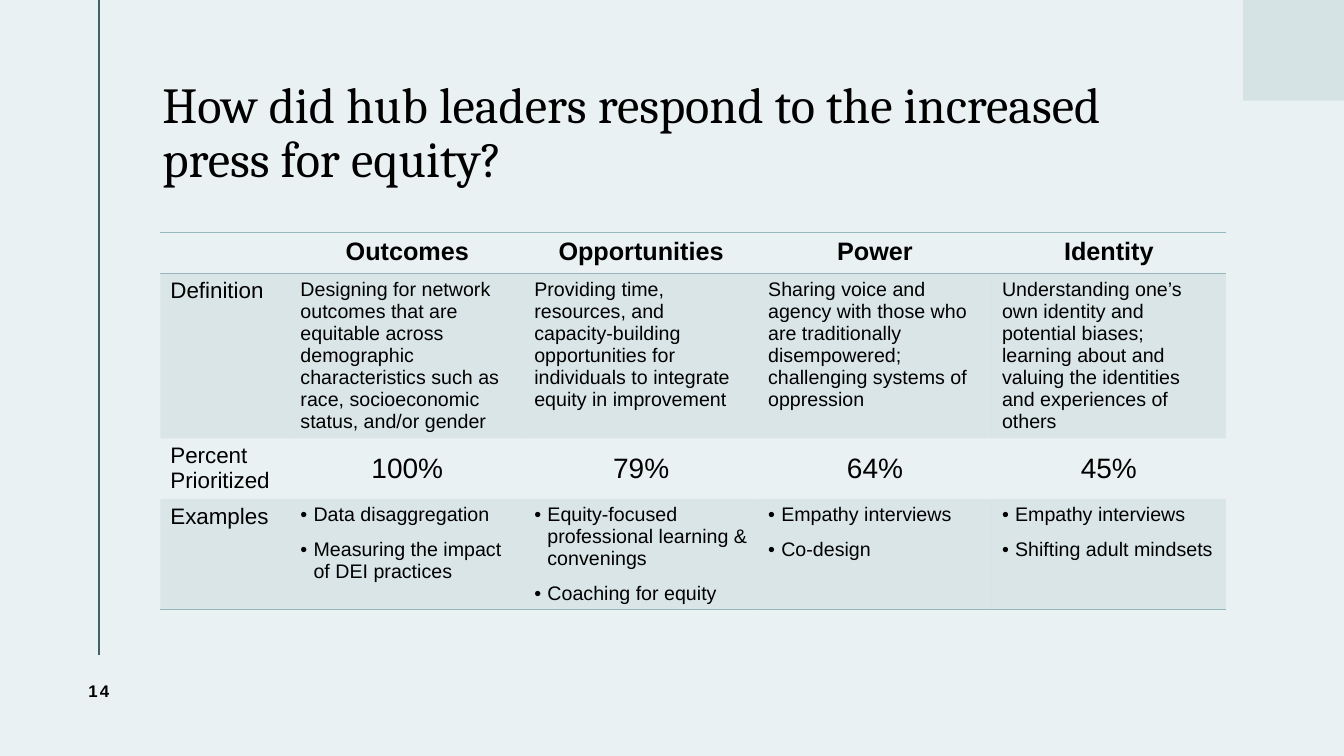
from lxml.etree import SubElement
from pptx import Presentation
from pptx.dml.color import RGBColor
from pptx.enum.shapes import MSO_CONNECTOR, MSO_SHAPE
from pptx.enum.text import MSO_ANCHOR, MSO_AUTO_SIZE, PP_ALIGN
from pptx.oxml.ns import qn
from pptx.util import Emu, Inches, Pt

WIDTH, HEIGHT = Inches(13.33), Inches(7.5)
BACKGROUND = RGBColor(0xEA, 0xF1, 0xF2)
RULE = RGBColor(0x40, 0x63, 0x6A)
CORNER = RGBColor(0xD5, 0xE3, 0xE5)
ACCENT = RGBColor(0x95, 0xB8, 0xBF)
BLACK = RGBColor(0, 0, 0)
NO_GRID_STYLE = "{2D5ABB26-0587-4C30-8999-92F81FD0307C}"

COLUMN_SHARES = [9.68] + [17.4] * 4
ROW_SHARES = [5.4, 21.8, 8, 14.67]
LABELS = ["", "Definition", "Percent\u0020Prioritized".replace("\u0020", " "), "Examples"]
LABELS = ["", "Definition", "Percent Prioritized", "Examples"]
HEADINGS = ["Outcomes", "Opportunities", "Power", "Identity"]
DEFINITIONS = [
    "Designing for network outcomes that are equitable across demographic "
    "characteristics such as race, socioeconomic status, and/or gender",
    "Providing time, resources, and capacity-building opportunities for "
    "individuals to integrate equity in improvement",
    "Sharing voice and agency with those who are traditionally disempowered; "
    "challenging systems of oppression",
    "Understanding one’s own identity and potential biases; learning about and "
    "valuing the identities and experiences of others",
]
PERCENTS = ["100%", "79%", "64%", "45%"]
EXAMPLES = [
    "Data disaggregation\nMeasuring the impact of DEI practices",
    "Equity-focused professional learning & convenings\nCoaching for equity",
    "Empathy interviews\nCo-design",
    "Empathy interviews\nShifting adult mindsets",
]


def across(percent):
    return Emu(round(WIDTH * percent / 100))


def down(percent):
    return Emu(round(HEIGHT * percent / 100))


def box(left, top, width, height):
    """Turn percentages of the slide into a position and size."""
    return across(left), down(top), across(width), down(height)


def style_text(text_frame, size, font="Arial", bold=False, align=PP_ALIGN.LEFT):
    for paragraph in text_frame.paragraphs:
        paragraph.alignment = align
        for run in paragraph.runs:
            run.font.name = font
            run.font.size = Pt(size)
            run.font.bold = bold
            run.font.color.rgb = BLACK


def add_decoration(slide):
    x = across(7.35)
    rule = slide.shapes.add_connector(MSO_CONNECTOR.STRAIGHT, x, 0, x, down(86.67))
    rule.line.color.rgb = RULE
    rule.line.width = Pt(1.5)
    SubElement(rule.element.spPr, qn("a:effectLst"))
    corner = slide.shapes.add_shape(MSO_SHAPE.RECTANGLE, *box(92.5, 0, 7.5, 13.33))
    corner.shadow.inherit = False
    corner.fill.solid()
    corner.fill.fore_color.rgb = CORNER
    corner.line.fill.background()


def set_title(slide, text):
    title = slide.shapes.title
    title.left, title.top, title.width, title.height = box(12.08, 7.33, 75.09, 20.8)
    frame = title.text_frame
    frame.text = text
    frame.word_wrap = True
    frame.auto_size = MSO_AUTO_SIZE.NONE
    frame.vertical_anchor = MSO_ANCHOR.MIDDLE
    frame.margin_left = 0
    frame.paragraphs[0].line_spacing = 0.9
    style_text(frame, 36, "Cambria")


def set_borders(cell, ruled_sides):
    """Rule the given sides (of L, R, T, B) and leave the others without a line."""
    properties = cell._tc.get_or_add_tcPr()
    for side in "LRTB":
        line = SubElement(properties, qn(f"a:ln{side}"), w=str(Pt(1)))
        if side in ruled_sides:
            fill = SubElement(line, qn("a:solidFill"))
            SubElement(fill, qn("a:srgbClr"), val=str(ACCENT))
        else:
            SubElement(line, qn("a:noFill"))


def shade(cell):
    cell.fill.solid()
    cell.fill.fore_color.rgb = ACCENT
    color = cell._tc.tcPr.find(f"{qn('a:solidFill')}/{qn('a:srgbClr')}")
    SubElement(color, qn("a:alpha"), val="20000")


def add_bullets(text_frame):
    indent = Inches(0.13)
    for index, paragraph in enumerate(text_frame.paragraphs):
        paragraph.space_before = Pt(9 if index else 0)
        properties = paragraph._p.get_or_add_pPr()
        properties.set("marL", str(indent))
        properties.set("indent", str(-indent))
        SubElement(properties, qn("a:buFont"), typeface="Arial")
        SubElement(properties, qn("a:buChar"), char="•")


def format_cell(cell, row, column):
    set_borders(cell, {0: "TB", 1: "T", 3: "B"}.get(row, ""))
    if row % 2:
        shade(cell)
    else:
        cell.fill.background()
    frame = cell.text_frame
    if row == 0:
        style_text(frame, 18, bold=True, align=PP_ALIGN.CENTER)
    elif column == 0:
        style_text(frame, 16)
    elif row == 2:
        cell.vertical_anchor = MSO_ANCHOR.MIDDLE
        style_text(frame, 20, align=PP_ALIGN.CENTER)
    else:
        style_text(frame, 14)
        if row == 3:
            add_bullets(frame)


def add_equity_table(slide):
    contents = [HEADINGS, DEFINITIONS, PERCENTS, EXAMPLES]
    area = box(11.93, 30.8, sum(COLUMN_SHARES), sum(ROW_SHARES))
    frame = slide.shapes.add_table(len(ROW_SHARES), len(COLUMN_SHARES), *area)
    table = frame.table
    table.first_row = table.horz_banding = False
    next(frame.element.iter(qn("a:tableStyleId"))).text = NO_GRID_STYLE
    for column, share in zip(table.columns, COLUMN_SHARES):
        column.width = across(share)
    for row, share in zip(table.rows, ROW_SHARES):
        row.height = down(share)
    for r, (label, entries) in enumerate(zip(LABELS, contents)):
        for c, text in enumerate([label, *entries]):
            cell = table.cell(r, c)
            cell.text_frame.text = text
            format_cell(cell, r, c)


def add_page_number(slide, number):
    frame = slide.shapes.add_textbox(*box(3.38, 86.67, 7.95, 9.47)).text_frame
    frame.word_wrap = True
    frame.vertical_anchor = MSO_ANCHOR.MIDDLE
    frame.text = number
    style_text(frame, 12, bold=True, align=PP_ALIGN.CENTER)
    frame.paragraphs[0].runs[0].font._element.set("spc", "150")


def main():
    presentation = Presentation()
    presentation.slide_width, presentation.slide_height = WIDTH, HEIGHT
    slide = presentation.slides.add_slide(presentation.slide_layouts[5])
    slide.background.fill.solid()
    slide.background.fill.fore_color.rgb = BACKGROUND
    add_decoration(slide)
    set_title(slide, "How did hub leaders respond to the increased press for equity?")
    add_equity_table(slide)
    add_page_number(slide, "14")
    presentation.save("out.pptx")


if __name__ == "__main__":
    main()
